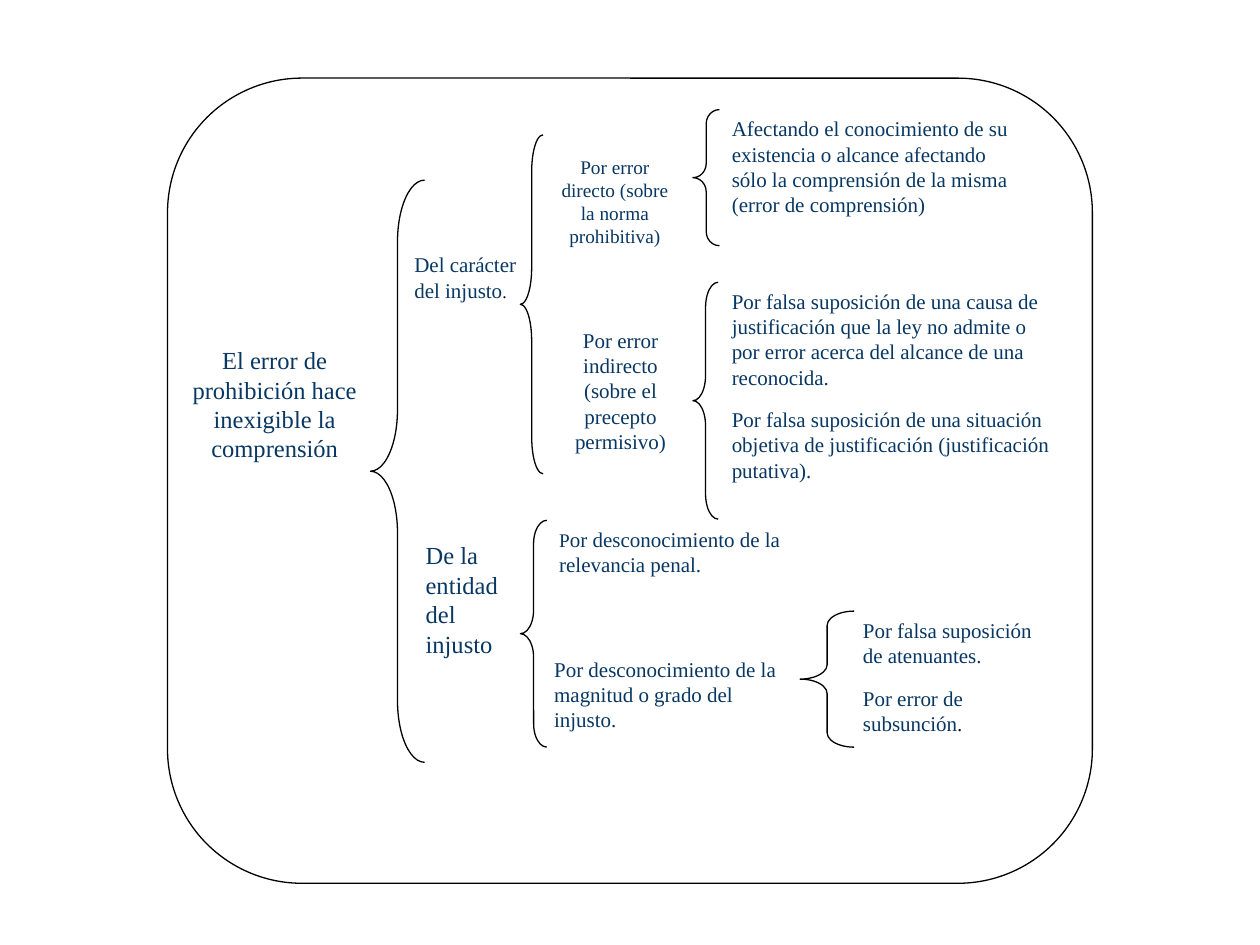
from pptx import Presentation
from pptx.dml.color import RGBColor
from pptx.enum.shapes import MSO_SHAPE as Shape
from pptx.enum.text import MSO_ANCHOR as Anchor, PP_ALIGN as Align
from pptx.util import Inches, Pt

COLORS = {"paper": "FFFFFF", "line": "000000", "text": "083763"}
COLUMNS, ROWS = 100, 75


class Diagram:
    font_name = "Times New Roman"
    frame_format = {
        "word_wrap": True,
        "vertical_anchor": Anchor.TOP,
        "margin_left": Inches(0.1),
        "margin_right": Inches(0.1),
        "margin_top": Inches(0.05),
        "margin_bottom": Inches(0.05),
    }
    paragraph_format = {"space_before": Pt(0), "space_after": Pt(10)}

    def __init__(self, presentation):
        self.cell_width = presentation.slide_width / COLUMNS
        self.cell_height = presentation.slide_height / ROWS
        self.slide = presentation.slides.add_slide(presentation.slide_layouts[6])

    def color(self, name):
        return RGBColor.from_string(COLORS[name])

    def apply(self, target, values):
        for name, value in values.items():
            setattr(target, name, value)

    def shape(self, kind, area, filled=True, outlined=True):
        column, row, columns, rows = area
        shape = self.slide.shapes.add_shape(
            kind,
            round(column * self.cell_width),
            round(row * self.cell_height),
            round(columns * self.cell_width),
            round(rows * self.cell_height),
        )
        shape.shadow.inherit = False
        if filled:
            shape.fill.solid()
            shape.fill.fore_color.rgb = self.color("paper")
        else:
            shape.fill.background()
        if outlined:
            shape.line.color.rgb = self.color("line")
            shape.line.width = Pt(0.75)
        else:
            shape.line.fill.background()
        return shape

    def panel(self, area, corner):
        self.shape(Shape.ROUNDED_RECTANGLE, area).adjustments[0] = corner

    def brace(self, area, curve):
        brace = self.shape(Shape.LEFT_BRACE, area, filled=False)
        brace.adjustments[0] = curve
        brace.adjustments[1] = 0.5

    def label(self, area, paragraphs, size=12, align=Align.LEFT, **frame_changes):
        frame = self.shape(Shape.RECTANGLE, area, outlined=False).text_frame
        self.apply(frame, {**self.frame_format, **frame_changes})
        for index, runs in enumerate(paragraphs):
            paragraph = frame.add_paragraph() if index else frame.paragraphs[0]
            self.apply(paragraph, {**self.paragraph_format, "alignment": align})
            for text, *changes in runs:
                run_size, color = changes or (size, "text")
                run = paragraph.add_run()
                run.text = text
                self.apply(run.font, {"name": self.font_name, "size": Pt(run_size)})
                run.font.color.rgb = self.color(color)


def main():
    presentation = Presentation()
    presentation.slide_width, presentation.slide_height = Inches(10), Inches(7.5)
    diagram = Diagram(presentation)
    diagram.panel((13.3, 6.2, 73.4, 63.9), 0.167)

    centered = {"align": Align.CENTER}
    labels = [
        ((14.2, 26.9, 15.2, 10.8),
         [[("El error de prohibición hace inexigible la comprensión",)]],
         {"size": 14, **centered}),
        ((31.9, 19.5, 10.2, 9),
         [[("Del carácter del injusto",), (".", 10, "line")]], {}),
        ((32.8, 42.4, 8.4, 10.8), [[("De la entidad del injusto",)]], {"size": 14}),
        ((43.4, 11.8, 10.8, 11.3),
         [[("Por error directo (sobre la norma prohibitiva)",)]],
         {"size": 11, **centered}),
        ((43.4, 25.5, 11.7, 12.1),
         [[("Por error indirecto (sobre el precepto permisivo)",)]], centered),
        ((43.4, 41.3, 21, 5.9),
         [[("P", 11, "text"), ("or desconocimiento de la relevancia penal.",)]], {}),
        ((43, 51.6, 21.3, 7.2),
         [[("Por desconocimiento de la magnitud o grado del injusto.",)]], {}),
        ((57.1, 8.7, 23.5, 12.1),
         [[("Afectando el conocimiento de su existencia o alcance afectando "
            "sólo la comprensión de la misma (error de comprensión)",)]],
         {"margin_right": 0}),
        ((57.1, 22.4, 27.7, 18.1),
         [[("Por falsa suposición de una causa de justificación que la ley no "
            "admite o por error acerca del alcance de una reconocida.",)],
          [("Por falsa suposición de una situación objetiva de justificación "
            "(justificación putativa).",)]], {}),
        ((67.5, 48.5, 17.1, 10.8),
         [[("Por falsa suposición de atenuantes.",)],
          [("Por error de subsunción",), (".", 11, "line")]], {}),
    ]
    for area, paragraphs, style in labels:
        diagram.label(area, paragraphs, **style)

    braces = [
        ((29.4, 14.3, 4.3, 46.2), 1.139),
        ((63.5, 48.5, 4.3, 10.8), 0.266),
        ((41.3, 41.3, 2.1, 18), 0.889),
        ((55, 22.4, 2, 18.8), 0.999),
        ((41.3, 10.7, 1.8, 26.9), 1.602),
        ((55, 8.7, 2.1, 10.8), 0.534),
    ]
    for area, curve in braces:
        diagram.brace(area, curve)

    presentation.save("out.pptx")


if __name__ == "__main__":
    main()
